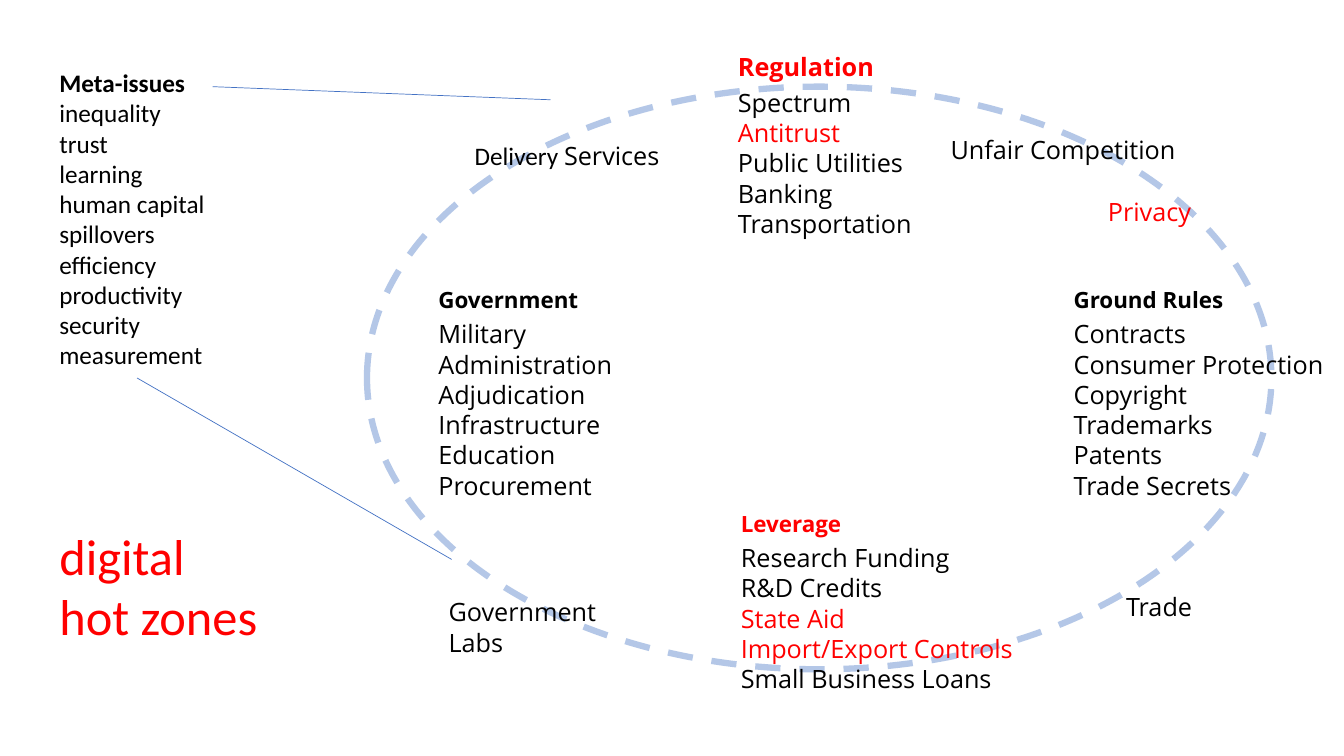
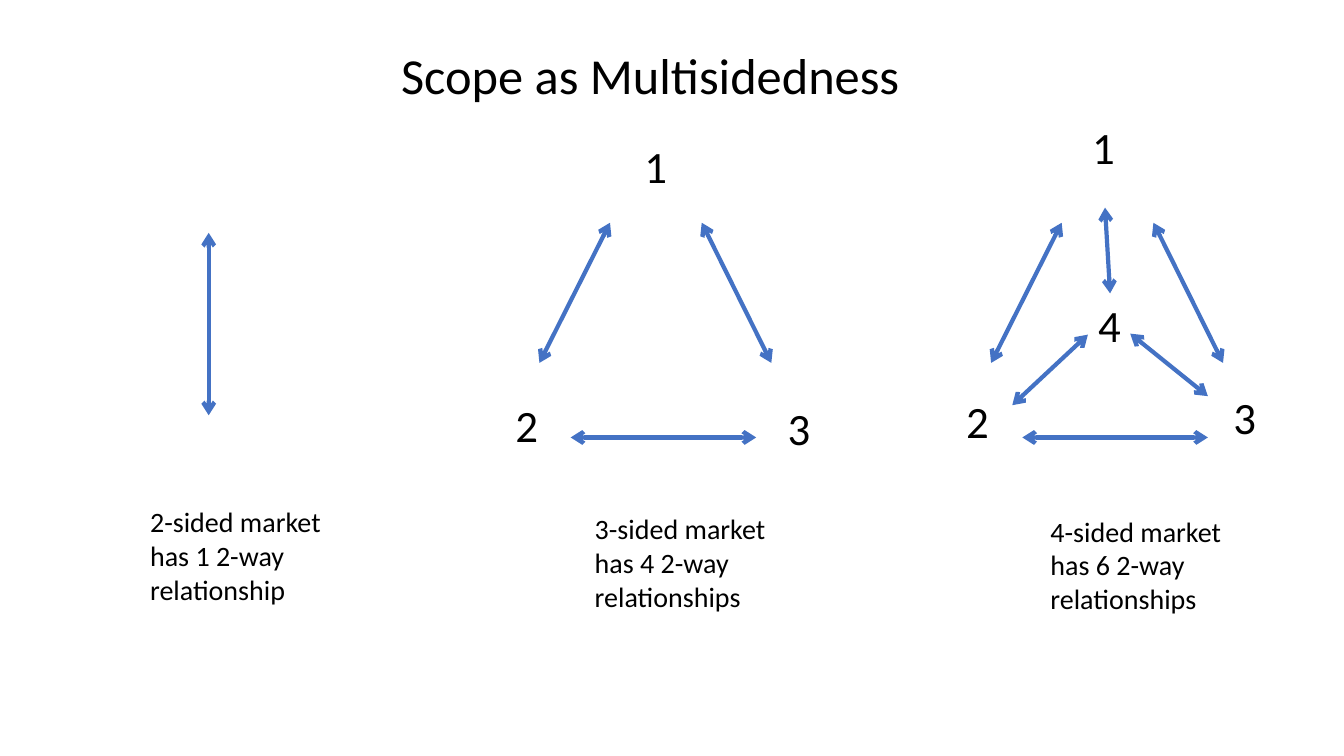
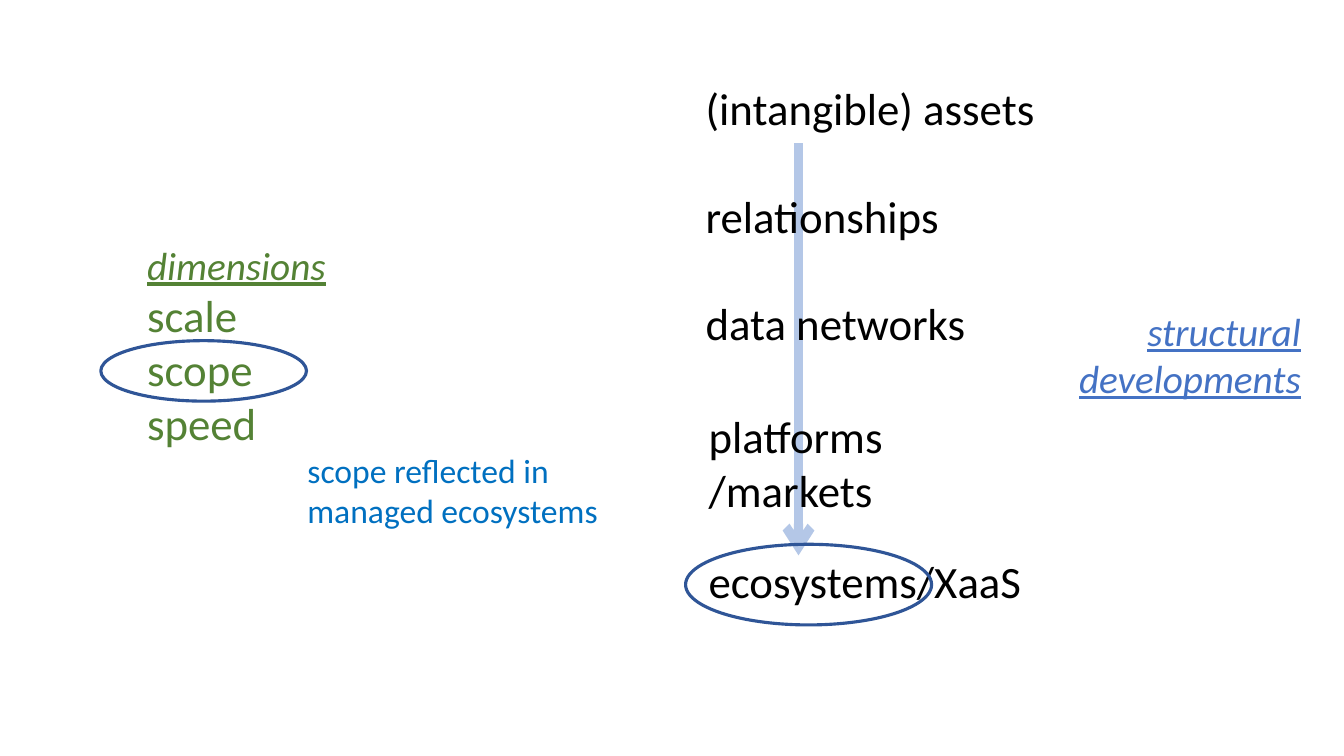
"""Build three slides on digital policy zones, multisided markets and ecosystems."""
from dataclasses import dataclass, replace

from lxml.etree import SubElement
from pptx import Presentation
from pptx.dml.color import RGBColor
from pptx.enum.dml import MSO_LINE
from pptx.enum.shapes import MSO_CONNECTOR, MSO_SHAPE
from pptx.enum.text import MSO_ANCHOR, MSO_AUTO_SIZE, PP_ALIGN
from pptx.oxml.ns import qn
from pptx.util import Pt

PX = 9144
SLIDE_W, SLIDE_H = 1333, 750
TITLE_ONLY, BLANK = 5, 6


@dataclass(frozen=True)
class Style:
    size: int
    color: str = "000000"
    font: str = "Calibri"
    bold: bool = False
    italic: bool = False
    underline: bool = False


class Theme:
    red, blue, pale, navy = "FF0000", "4472C4", "B4C7E7", "2F5597"
    green, sky = "548235", "0070C0"
    title = Style(36)
    item = Style(18, font="Open Sans")
    hot_item = replace(item, color=red)
    meta = Style(18)
    meta_head = replace(meta, bold=True)
    zones = Style(36, red)
    caption = Style(20)
    large = Style(32)
    dimension = Style(32, green)
    dimension_head = Style(28, green, italic=True, underline=True)
    structure = Style(28, blue, italic=True, underline=True)
    note = Style(24, sky)
    head_before, head_after = 14, 4
    thin, arrow, ring, flow, dashes = 0.5, 3, 2.25, 6.5, 4.5


HOT = {"Regulation", "Leverage", "Antitrust", "State Aid", "Import/Export Controls", "Privacy"}
POLICY_GROUPS = [
    ((725, 501, 333, 194), "Leverage", 16,
     ["Research Funding", "R&D Credits", "State Aid", "Import/Export Controls", "Small Business Loans"]),
    ((425, 279, 666, 224), "Government", 16,
     ["Military", "Administration", "Adjudication", "Infrastructure", "Education", "Procurement"]),
    ((722, 46, 211, 218), "Regulation", 18,
     ["Spectrum", "Antitrust", "Public Utilities", "Banking", "Transportation"]),
    ((1055, 279, 358, 255), "Ground Rules", 16,
     ["Contracts", "Consumer Protection", "Copyright", "Trademarks", "Patents", "Trade Secrets"]),
]
BETWEEN_GROUPS = [
    ((1044, 190, 192, 40), "Privacy", PP_ALIGN.CENTER),
    ((933, 128, 297, 40), "Unfair Competition", PP_ALIGN.LEFT),
    ((435, 587, 219, 71), "Government Labs", PP_ALIGN.LEFT),
    ((1107, 582, 247, 40), "Trade", PP_ALIGN.LEFT),
]
META_ISSUES = ["inequality", "trust", "learning", "human capital", "spillovers", "efficiency",
               "productivity", "security", "measurement"]
META_LINES = [(211, 86, 546, 99), (136, 375, 448, 555)]

TWO_SIDED = [(207, 231, 207, 412)]
TRIANGLE = [(605, 221, 535, 360), (765, 360, 696, 221), (750, 434, 566, 434)]
TRIANGLE_GAP = 448
SPOKES = [(1079, 332, 1004, 402), (1198, 393, 1121, 331), (1101, 291, 1096, 206)]
SIDE_W, SIDE_H = 91, 64
SIDES = [
    [(605, 133), (477, 390), (747, 393)],
    [(1049, 114), (924, 386), (1189, 382), (1055, 290)],
]
CAPTIONS = [
    ((139, 496, 218, 111), "2-sided market has 1 2-way relationship"),
    ((580, 503, 202, 111), "3-sided market has 4 2-way relationships"),
    ((1032, 505, 202, 111), "4-sided market has 6 2-way relationships"),
]

STAGES = [
    ((690, 75, 425, 64), "(intangible) assets"),
    ((690, 182, 417, 64), "relationships"),
    ((690, 288, 417, 64), "data networks"),
    ((693, 401, 198, 118), "platforms/markets"),
    ((693, 544, 417, 64), "ecosystems/XaaS"),
]
STAGE_FLOW = (792, 142, 792, 551)
RINGS = [(680, 540, 244, 80), (100, 338, 204, 60)]


def emu(lengths):
    return [n * PX for n in lengths]


def rgb(color):
    return RGBColor.from_string(color)


def fill_text(tf, paragraphs, align=PP_ALIGN.LEFT):
    tf.word_wrap = True
    tf.vertical_anchor = MSO_ANCHOR.TOP
    for i, runs in enumerate(paragraphs):
        p = tf.add_paragraph() if i else tf.paragraphs[0]
        p.alignment = align
        for text, style in runs:
            r = p.add_run()
            r.text = text
            f = r.font
            f.name, f.size, f.color.rgb = style.font, Pt(style.size), rgb(style.color)
            f.bold, f.italic, f.underline = style.bold, style.italic, style.underline


def add_text(s, box, paragraphs, align=PP_ALIGN.LEFT):
    tf = s.shapes.add_textbox(*emu(box)).text_frame
    fill_text(tf, paragraphs, align)
    tf.auto_size = MSO_AUTO_SIZE.SHAPE_TO_FIT_TEXT
    return tf


def add_line(s, ends, color, width, heads=()):
    cx = s.shapes.add_connector(MSO_CONNECTOR.STRAIGHT, *emu(ends))
    cx.line.color.rgb = rgb(color)
    cx.line.width = Pt(width)
    ln = cx.line._get_or_add_ln()
    for head in heads:
        SubElement(ln, qn(f"a:{head}"), type="arrow")
    SubElement(cx._element.spPr, qn("a:effectLst"))


def add_ring(s, box, color, width, dash=None):
    sp = s.shapes.add_shape(MSO_SHAPE.OVAL, *emu(box))
    sp.shadow.inherit = False
    sp.fill.background()
    sp.line.color.rgb = rgb(color)
    sp.line.width = Pt(width)
    if dash:
        sp.line.dash_style = dash


def item_style(text):
    return Theme.hot_item if text in HOT else Theme.item


def build_hot_zones(prs):
    s = prs.slides.add_slide(prs.slide_layouts[BLANK])
    add_ring(s, (364, 86, 897, 578), Theme.pale, Theme.dashes, MSO_LINE.DASH)
    for box, head, size, items in POLICY_GROUPS:
        head_style = replace(item_style(head), size=size, bold=True)
        tf = add_text(s, box, [[(head, head_style)]] + [[(t, item_style(t))] for t in items])
        p = tf.paragraphs[0]
        p.space_before, p.space_after = Pt(Theme.head_before), Pt(Theme.head_after)
    add_text(s, (49, 62, 351, 374),
             [[("Meta-issues", Theme.meta_head)]] + [[(t, Theme.meta)] for t in META_ISSUES])
    for ends in META_LINES:
        add_line(s, ends, Theme.blue, Theme.thin)
    for box, text, align in BETWEEN_GROUPS:
        add_text(s, box, [[(text, item_style(text))]], align)
    add_text(s, (461, 134, 232, 40), [[("Delivery ", Theme.meta), ("Services", Theme.item)]])
    add_text(s, (49, 516, 222, 131), [[("digital hot zones", Theme.zones)]])


def build_multisidedness(prs):
    s = prs.slides.add_slide(prs.slide_layouts[TITLE_ONLY])
    title = s.shapes.title
    title.left, title.top, title.width, title.height = emu((307, 39, 676, 71))
    fill_text(title.text_frame, [[("Scope as Multisidedness", Theme.title)]], PP_ALIGN.CENTER)
    shifted = [(x1 + TRIANGLE_GAP, y1, x2 + TRIANGLE_GAP, y2) for x1, y1, x2, y2 in TRIANGLE]
    for ends in TWO_SIDED + TRIANGLE + shifted + SPOKES:
        add_line(s, ends, Theme.blue, Theme.arrow, ("headEnd", "tailEnd"))
    for market in SIDES:
        for number, (x, y) in enumerate(market, 1):
            add_text(s, (x, y, SIDE_W, SIDE_H), [[(str(number), Theme.large)]], PP_ALIGN.CENTER)
    for box, text in CAPTIONS:
        add_text(s, box, [[(text, Theme.caption)]])


def build_ecosystems(prs):
    s = prs.slides.add_slide(prs.slide_layouts[BLANK])
    add_text(s, (136, 234, 281, 226),
             [[("dimensions", Theme.dimension_head)]]
             + [[(t, Theme.dimension)] for t in ("scale", "scope", "speed")])
    add_line(s, STAGE_FLOW, Theme.pale, Theme.flow, ("tailEnd",))
    for box, text in STAGES:
        add_text(s, box, [[(text, Theme.large)]])
    add_text(s, (1057, 300, 243, 104), [[("structural developments", Theme.structure)]], PP_ALIGN.RIGHT)
    for box in RINGS:
        add_ring(s, box, Theme.navy, Theme.ring)
    add_text(s, (295, 441, 332, 91), [[("scope reflected in managed ecosystems", Theme.note)]])


def main():
    prs = Presentation()
    prs.slide_width, prs.slide_height = emu((SLIDE_W, SLIDE_H))
    build_hot_zones(prs)
    build_multisidedness(prs)
    build_ecosystems(prs)
    prs.save("out.pptx")


if __name__ == "__main__":
    main()
